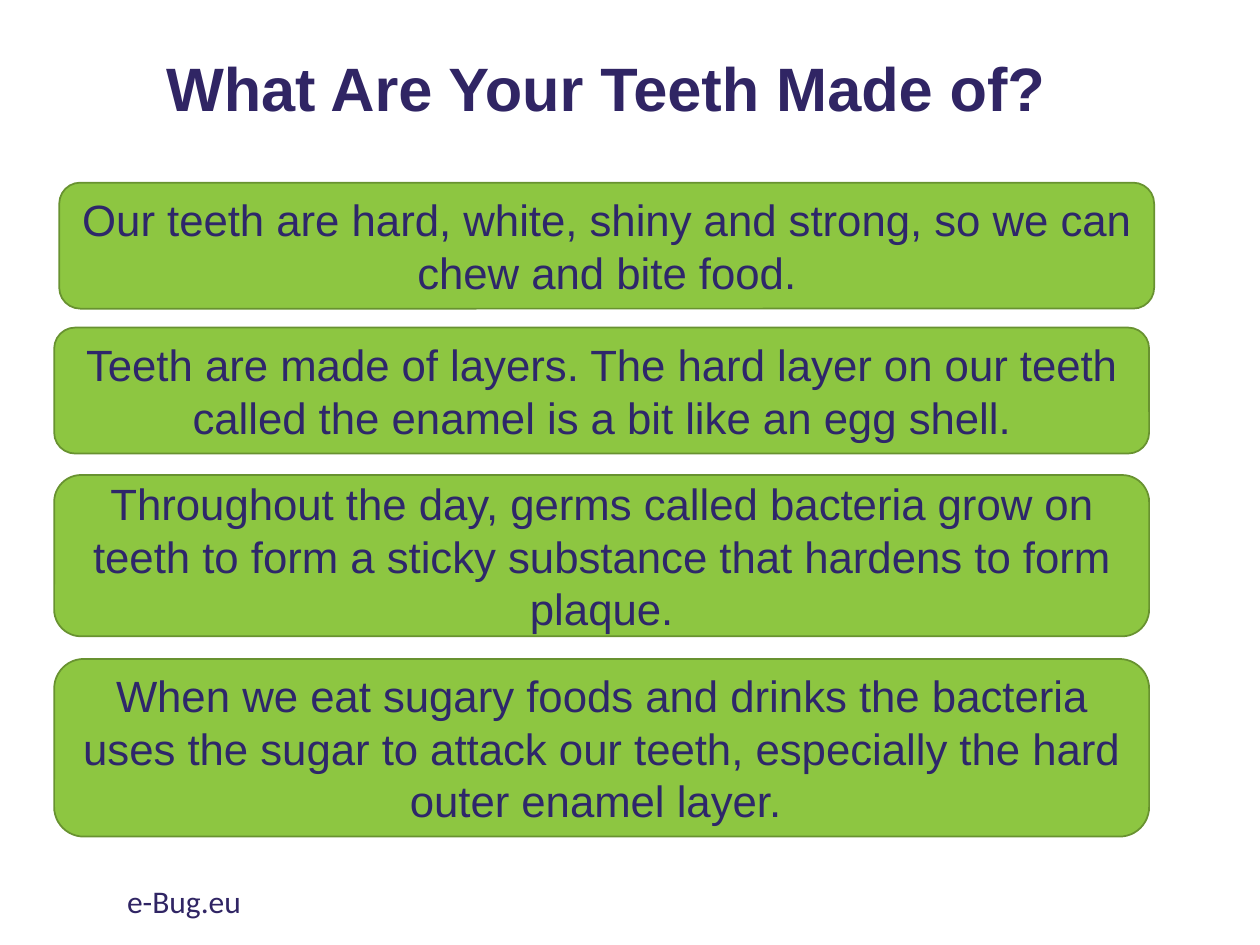
from dataclasses import dataclass

from pptx import Presentation
from pptx.dml.color import RGBColor
from pptx.enum.shapes import MSO_SHAPE
from pptx.enum.text import MSO_ANCHOR, PP_ALIGN
from pptx.util import Inches, Pt

WIDTH, HEIGHT = 10, 7.5
GREEN, DARK_GREEN = "8DC641", "689230"
INDIGO, TITLE_INDIGO = "2E276A", "302564"


@dataclass
class Fact:
    """A tooth fact; left, top and height are in inches."""
    left: float
    top: float
    height: float
    wording: str


FACT_WIDTH = 8.69
FACTS = [
    Fact(0.47, 1.45, 1, "Our teeth are hard, white, shiny and strong, so we can "
         "chew and bite food."),
    Fact(0.43, 2.6, 1, "Teeth are made of layers. The hard layer on our teeth "
         "called the enamel is a bit like an egg shell."),
    Fact(0.43, 3.77, 1.28, "Throughout the day, germs called bacteria grow on "
         "teeth to form a sticky substance that hardens to form plaque."),
    Fact(0.43, 5.23, 1.41, "When we eat sugary foods and drinks the bacteria uses "
         "the sugar to attack our teeth, especially the hard outer enamel layer. "),
]


def color(value: str) -> RGBColor:
    return RGBColor.from_string(value)


def write(shape, wording: str, size: float, ink: str, font: str = "Arial",
          bold: bool = False, align=PP_ALIGN.CENTER, anchor=MSO_ANCHOR.MIDDLE):
    """Set a shape's one paragraph and format it."""
    frame = shape.text_frame
    frame.text = wording
    frame.word_wrap = True
    frame.vertical_anchor = anchor
    paragraph = frame.paragraphs[0]
    paragraph.alignment = align
    style = paragraph.runs[0].font
    style.name, style.size, style.bold = font, Pt(size), bold
    style.color.rgb = color(ink)
    return paragraph


def draw_fact(slide, fact: Fact) -> None:
    panel = slide.shapes.add_shape(
        MSO_SHAPE.ROUNDED_RECTANGLE, Inches(fact.left), Inches(fact.top),
        Inches(FACT_WIDTH), Inches(fact.height))
    panel.shadow.inherit = False
    panel.fill.solid()
    panel.fill.fore_color.rgb = color(GREEN)
    panel.line.color.rgb = color(DARK_GREEN)
    panel.line.width = Pt(1)
    write(panel, fact.wording, 25, INDIGO)


def main() -> None:
    deck = Presentation()
    deck.slide_width, deck.slide_height = Inches(WIDTH), Inches(HEIGHT)
    slide = deck.slides.add_slide(deck.slide_layouts[6])

    # Title
    title = slide.shapes.add_textbox(Inches(0.5), 0, Inches(8.62), Inches(1.45))
    heading = write(title, "What Are Your Teeth Made of?", 35, TITLE_INDIGO, bold=True)
    heading.line_spacing = 0.9

    # Web address in the footer
    footer = slide.shapes.add_textbox(
        Inches(0.91), Inches(6.95), Inches(3.38), Inches(0.4))
    write(footer, "e-Bug.eu", 18, TITLE_INDIGO, font="Calibri",
          align=PP_ALIGN.LEFT, anchor=MSO_ANCHOR.TOP)

    # Fact panels
    for fact in FACTS:
        draw_fact(slide, fact)

    deck.save("out.pptx")


if __name__ == "__main__":
    main()
